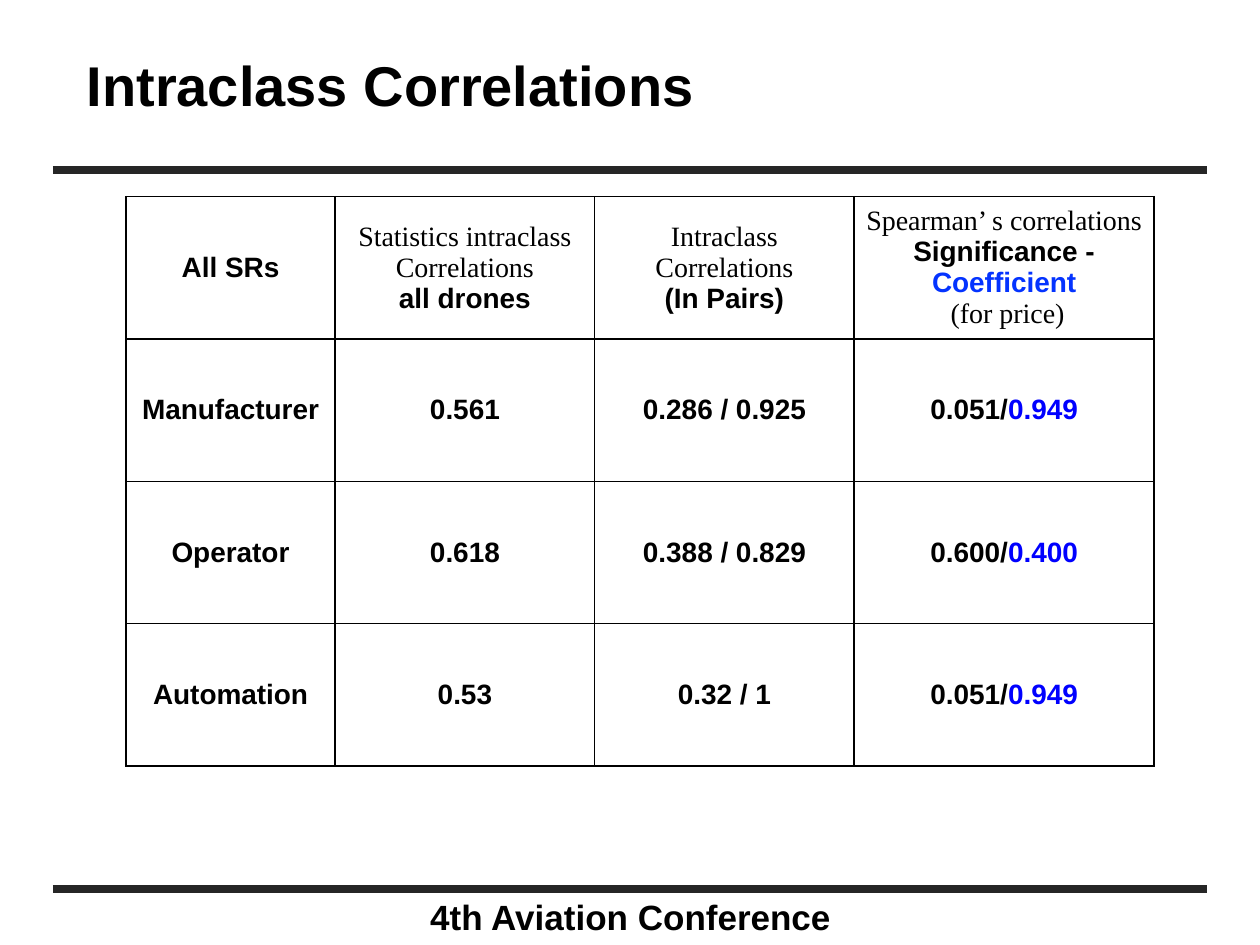
from lxml.etree import SubElement as Sub
from pptx import Presentation
from pptx.dml.color import RGBColor
from pptx.enum.shapes import MSO_CONNECTOR as Link
from pptx.enum.text import MSO_ANCHOR as Anchor, PP_ALIGN as Align
from pptx.oxml.ns import qn
from pptx.util import Inches, Pt

WIDE, HIGH = 10, 7.5
EDGE = 0.042 * WIDE
BLACK, GREY = "000000", "262626"
BLUE, LINK = "0000FF", "0433FF"
SANS, SERIF = "Arial", "Times New Roman"
COLS = [1.66, 2.06, 2.06, 2.38]
ROW = 1.13

# A cell is a list of lines, a line a list of (text, colour, font) runs.
HEAD = [
    [[("All SRs", BLACK, SANS)]],
    [[("Statistics intraclass Correlations", BLACK, SERIF)],
     [("all drones", BLACK, SANS)]],
    [[("Intraclass Correlations", BLACK, SERIF)],
     [("(In Pairs)", BLACK, SANS)]],
    [[("Spearman’ s correlations", BLACK, SERIF)],
     [("Significance - ", BLACK, SANS), ("Coefficient", LINK, SANS)],
     [(" (for price)", BLACK, SERIF)]],
]
DATA = [
    ("Manufacturer", "0.561", "0.286 / 0.925", "0.051/", "0.949"),
    ("Operator", "0.618", "0.388 / 0.829", "0.600/", "0.400"),
    ("Automation", "0.53", "0.32 / 1", "0.051/", "0.949"),
]


def paint(hue):
    return RGBColor.from_string(hue)


def write(frame, lines, size):
    """Fill a text frame with centred lines; the sans runs are bold."""
    for i, line in enumerate(lines):
        para = frame.add_paragraph() if i else frame.paragraphs[0]
        para.alignment = Align.CENTER
        for text, hue, face in line:
            run = para.add_run()
            run.text = text
            font = run.font
            font.name, font.size, font.bold = face, Pt(size), face == SANS
            font.color.rgb = paint(hue)


def add_rule(slide, y):
    rule = slide.shapes.add_connector(
        Link.STRAIGHT, Inches(EDGE), Inches(y), Inches(WIDE - EDGE), Inches(y))
    rule.line.color.rgb = paint(GREY)
    rule.line.width = Pt(4.5)
    Sub(rule._element.spPr, qn("a:effectLst"))


def add_label(slide, area, text, size, anchor):
    box = slide.shapes.add_textbox(*map(Inches, area))
    frame = box.text_frame
    frame.word_wrap = True
    frame.vertical_anchor = anchor
    frame.margin_left = frame.margin_right = Inches(0.05)
    frame.margin_top = frame.margin_bottom = Inches(0.05)
    write(frame, [[(text, BLACK, SANS)]], size)


def add_frame(cell):
    """Draw a thin black border on all four sides of a cell."""
    props = cell._tc.get_or_add_tcPr()
    for i, side in enumerate(("lnL", "lnR", "lnT", "lnB")):
        line = props.makeelement(qn(f"a:{side}"), {"w": str(Pt(1))})
        fill = Sub(line, qn("a:solidFill"))
        Sub(fill, qn("a:srgbClr"), val=BLACK)
        props.insert(i, line)


def add_grid(slide, rows):
    shape = slide.shapes.add_table(
        len(rows), len(COLS), Inches(0.1 * WIDE), Inches(1.56),
        Inches(sum(COLS)), Inches(ROW * len(rows)))
    table = shape.table
    table.first_row = table.horz_banding = False
    for col, width in zip(table.columns, COLS):
        col.width = Inches(width)
    for r, row in enumerate(rows):
        table.rows[r].height = Inches(ROW)
        for c, lines in enumerate(row):
            cell = table.cell(r, c)
            cell.fill.background()
            cell.vertical_anchor = Anchor.MIDDLE
            cell.margin_left = cell.margin_right = Inches(0.07)
            cell.margin_top = cell.margin_bottom = 0
            write(cell.text_frame, lines, 16)
            add_frame(cell)


def data_row(*texts):
    """Turn texts into cells; the last two share one cell, the last in blue."""
    *plain, left, right = texts
    cells = [[[(text, BLACK, SANS)]] for text in plain]
    return cells + [[[(left, BLACK, SANS), (right, BLUE, SANS)]]]


def main():
    deck = Presentation()
    deck.slide_width, deck.slide_height = Inches(WIDE), Inches(HIGH)
    slide = deck.slides.add_slide(deck.slide_layouts[6])
    for share in (0.18, 0.941):
        add_rule(slide, share * HIGH)
    add_label(slide, (1.42, 7.06, 7.17, 0.41),
              "4th Aviation Conference", 20, Anchor.TOP)
    add_label(slide, (0.45, 0.19, 5.3, 0.95),
              "Intraclass Correlations", 32, Anchor.MIDDLE)
    add_grid(slide, [HEAD] + [data_row(*texts) for texts in DATA])
    deck.save("out.pptx")


if __name__ == "__main__":
    main()
